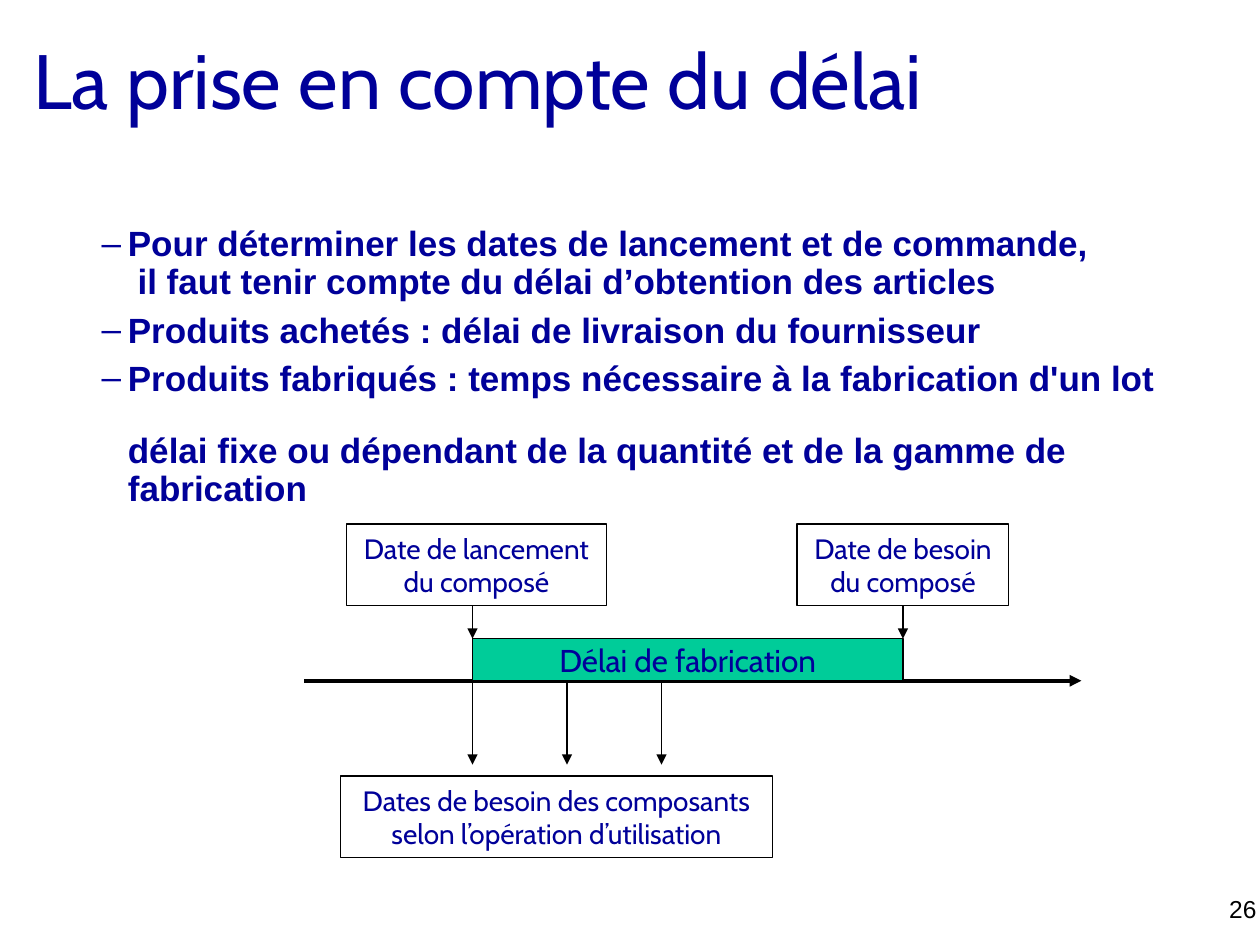
from lxml import etree
from pptx import Presentation
from pptx.dml.color import RGBColor
from pptx.enum import shapes, text
from pptx.oxml.ns import qn
from pptx.util import Pt

NAVY, BLACK, GREEN = "000099", "000000", "00CC99"
TITLE = "La prise en compte du délai"
POINTS = [
    ["Pour déterminer les dates de lancement et de commande,",
     " il faut tenir compte du délai d’obtention des articles"],
    ["Produits achetés : délai de livraison du fournisseur"],
    ["Produits fabriqués : temps nécessaire à la fabrication d'un lot ",
     "délai fixe ou dépendant de la quantité et de la gamme de fabrication"],
]


def color(value):
    """Turn a hex string into a colour."""
    return RGBColor.from_string(value)


def add_span(para, words, size, font, ink=NAVY, bold=False):
    """Append one formatted run to a paragraph."""
    span = para.add_run()
    span.text = words
    span.font.size = Pt(size)
    span.font.name = font
    span.font.bold = bold
    span.font.color.rgb = color(ink)


def add_frame(page, left, top, width, height, anchor=text.MSO_ANCHOR.TOP):
    """Add an empty wrapping text box and return its text frame."""
    frame = page.shapes.add_textbox(Pt(left), Pt(top), Pt(width), Pt(height)).text_frame
    frame.word_wrap = True
    frame.vertical_anchor = anchor
    return frame


def add_title(page, left, top, width, height):
    """Place the slide title."""
    frame = add_frame(page, left, top, width, height, text.MSO_ANCHOR.MIDDLE)
    add_span(frame.paragraphs[0], TITLE, 44, "Cabin")


def add_points(page, left, top, width, height):
    """Place the dashed list."""
    frame = add_frame(page, left, top, width, height)
    for index, lines in enumerate(POINTS):
        para = frame.paragraphs[0] if index == 0 else frame.add_paragraph()
        para.line_spacing = 0.9
        para.space_before = Pt(6)
        props = para._p.get_or_add_pPr()
        props.set("marL", str(Pt(30)))
        props.set("indent", str(-Pt(15)))
        etree.SubElement(props, qn("a:buFont"), typeface="Arial")
        etree.SubElement(props, qn("a:buChar"), char="–")
        for number, line in enumerate(lines):
            if number:
                para.add_line_break()
            add_span(para, line, 20, "Arial", bold=True)


def add_page_number(page, left, top, width, height):
    """Place the page number at the right."""
    para = add_frame(page, left, top, width, height, text.MSO_ANCHOR.MIDDLE).paragraphs[0]
    para.alignment = text.PP_ALIGN.RIGHT
    page.shapes[-1].text_frame.margin_right = Pt(2)
    add_span(para, "26", 14, "Arial", BLACK)


def add_box(page, left, top, width, height, lines, size=16, fill=None):
    """Add an outlined rectangle with centred lines."""
    box = page.shapes.add_shape(
        shapes.MSO_SHAPE.RECTANGLE, Pt(left), Pt(top), Pt(width), Pt(height))
    box.shadow.inherit = False
    box.line.color.rgb = color(BLACK)
    box.line.width = Pt(0.75)
    if fill:
        box.fill.solid()
        box.fill.fore_color.rgb = color(fill)
    else:
        box.fill.background()
    frame = box.text_frame
    frame.word_wrap = False
    frame.vertical_anchor = text.MSO_ANCHOR.MIDDLE
    for index, line in enumerate(lines):
        para = frame.paragraphs[0] if index == 0 else frame.add_paragraph()
        para.alignment = text.PP_ALIGN.CENTER
        add_span(para, line, size, "Cabin")
    return box


def add_arrow(page, x1, y1, x2, y2, weight=0.75):
    """Add a straight black arrow."""
    arrow = page.shapes.add_connector(
        shapes.MSO_CONNECTOR.STRAIGHT, Pt(x1), Pt(y1), Pt(x2), Pt(y2))
    arrow.line.color.rgb = color(BLACK)
    arrow.line.width = Pt(weight)
    etree.SubElement(arrow.line._get_or_add_ln(), qn("a:tailEnd"), type="triangle")
    etree.SubElement(arrow._element.spPr, qn("a:effectLst"))
    return arrow


def add_timeline(page, left, top, width, height):
    """Place the lead time bar on its axis with the dates around it."""
    start, end = left + 96, left + 342
    bar_top, axis = top + 65.5, top + 89.5
    label_height = 46.5
    label_bottom = top + label_height
    add_arrow(page, left, axis, left + width, axis, 2.25)
    need = add_box(page, end - 60.5, top, 121, label_height,
                   ["Date de besoin", "du composé"])
    add_arrow(page, end, label_bottom, end, bar_top).begin_connect(need, 2)
    add_arrow(page, start, label_bottom, start, bar_top)
    add_box(page, left + 24, top, 148.5, label_height,
            ["Date de lancement", "du composé"])
    add_box(page, start, bar_top, end - start, axis - bar_top,
            ["Délai de fabrication"], 18, GREEN)
    for step in range(3):
        x = start + 54 * step
        add_arrow(page, x, axis, x, axis + 48)
    add_box(page, left + 20.5, top + height - label_height, 247, label_height,
            ["Dates de besoin des composants", "selon l’opération d’utilisation"])


def main():
    """Build and save the deck."""
    deck = Presentation()
    deck.slide_width, deck.slide_height = Pt(720), Pt(540)
    page = deck.slides.add_slide(deck.slide_layouts[6])
    add_page_number(page, 570, 510, 150, 18)
    add_title(page, 12, 0, 612, 90)
    add_points(page, 36, 126, 636, 156)
    add_timeline(page, 174, 299.5, 444, 190.5)
    deck.save("out.pptx")


if __name__ == "__main__":
    main()
